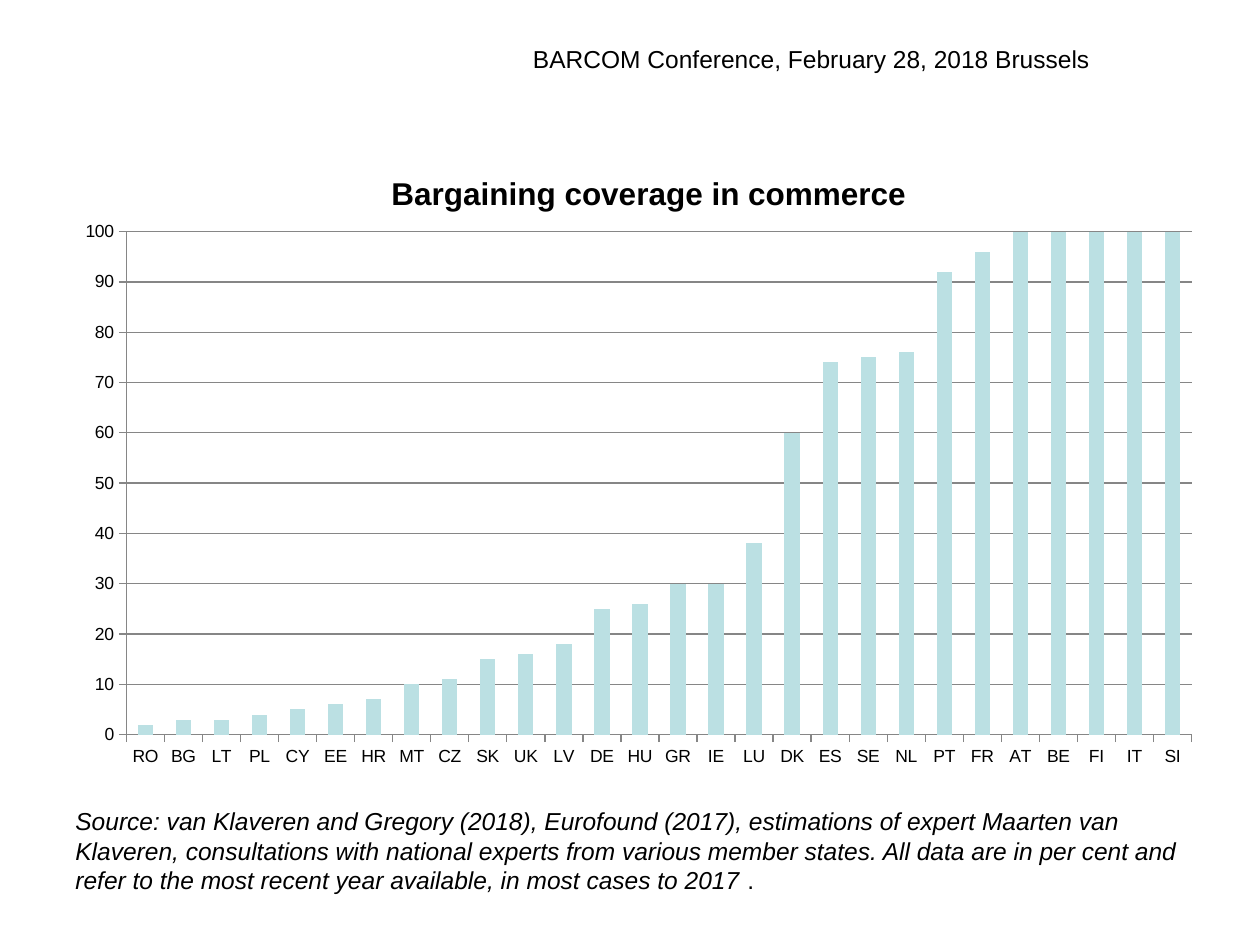
from dataclasses import dataclass

import lxml.etree
import pptx
import pptx.chart.data
import pptx.dml.color
import pptx.enum.chart
import pptx.enum.text
import pptx.oxml.ns
import pptx.util

Inches = pptx.util.Inches
Pt = pptx.util.Pt


@dataclass(frozen=True)
class Theme:
    font: str = "Arial"
    ink: str = "000000"
    bar: str = "BBE0E3"
    rule: str = "868686"
    text_size: int = 14
    chart_title_size: int = 18
    axis_size: int = 10


COVERAGE = {
    "RO": 2, "BG": 3, "LT": 3, "PL": 4, "CY": 5, "EE": 6, "HR": 7,
    "MT": 10, "CZ": 11, "SK": 15, "UK": 16, "LV": 18, "DE": 25, "HU": 26,
    "GR": 30, "IE": 30, "LU": 38, "DK": 60, "ES": 74, "SE": 75, "NL": 76,
    "PT": 92, "FR": 96, "AT": 100, "BE": 100, "FI": 100, "IT": 100, "SI": 100,
}
SOURCE = (
    "Source: van Klaveren and Gregory (2018), Eurofound (2017), estimations of "
    "expert Maarten van Klaveren, consultations with national experts from various "
    "member states. All data are in per cent and refer to the most recent year "
    "available, in most cases to 2017"
)


def color(value):
    return pptx.dml.color.RGBColor.from_string(value)


def add_text(paragraph, text, *, font, size, ink, bold=False, italic=False):
    """Append one formatted run to a paragraph."""
    run = paragraph.add_run()
    run.text = text
    run.font.name = font
    run.font.size = Pt(size)
    run.font.bold = bold
    run.font.italic = italic
    run.font.color.rgb = color(ink)


def set_layout(parent, index, **settings):
    """Give a chart part a manual layout, in fractions of the chart."""
    name = pptx.oxml.ns.qn
    for old in parent.findall(name("c:layout")):
        parent.remove(old)
    layout = lxml.etree.Element(name("c:layout"))
    manual = lxml.etree.SubElement(layout, name("c:manualLayout"))
    for key, value in settings.items():
        lxml.etree.SubElement(manual, name(f"c:{key}")).set("val", str(value))
    parent.insert(index, layout)


class SlideBuilder:
    def __init__(self, presentation, theme):
        self.theme = theme
        self.slide = presentation.slides.add_slide(presentation.slide_layouts[5])

    def body_style(self):
        return dict(font=self.theme.font, size=self.theme.text_size, ink=self.theme.ink)

    def title(self, text, left, top, width, height):
        shape = self.slide.shapes.title
        shape.left, shape.top = Inches(left), Inches(top)
        shape.width, shape.height = Inches(width), Inches(height)
        frame = shape.text_frame
        frame.auto_size = pptx.enum.text.MSO_AUTO_SIZE.NONE
        frame.vertical_anchor = pptx.enum.text.MSO_ANCHOR.TOP
        paragraph = frame.paragraphs[0]
        paragraph.alignment = pptx.enum.text.PP_ALIGN.LEFT
        add_text(paragraph, text, **self.body_style())

    def note(self, text, ending, left, top, width, height):
        shape = self.slide.shapes.add_textbox(
            Inches(left), Inches(top), Inches(width), Inches(height))
        shape.text_frame.word_wrap = True
        paragraph = shape.text_frame.paragraphs[0]
        add_text(paragraph, text, italic=True, **self.body_style())
        add_text(paragraph, ending, **self.body_style())

    def column_chart(self, title, values, left, top, width, height):
        theme = self.theme
        data = pptx.chart.data.CategoryChartData()
        data.categories = list(values)
        data.add_series("Series 1", list(values.values()))
        chart = self.slide.shapes.add_chart(
            pptx.enum.chart.XL_CHART_TYPE.COLUMN_CLUSTERED,
            Inches(left), Inches(top), Inches(width), Inches(height), data).chart
        chart.has_legend = False
        chart.font.name = theme.font
        chart.font.size = Pt(theme.axis_size)
        chart.font.color.rgb = color(theme.ink)

        # Chart title
        chart.has_title = True
        add_text(chart.chart_title.text_frame.paragraphs[0], title, bold=True,
                 font=theme.font, size=theme.chart_title_size, ink=theme.ink)
        set_layout(chart.chart_title._element, 1,
                   xMode="edge", yMode="edge", x=0.28, y=0.05)

        # Columns and plot area
        plot = chart.plots[0]
        plot.gap_width = 150
        plot.vary_by_categories = False
        fill = plot.series[0].format.fill
        fill.solid()
        fill.fore_color.rgb = color(theme.bar)
        set_layout(chart._chartSpace.chart.plotArea, 0, layoutTarget="inner",
                   xMode="edge", yMode="edge", x=0.055, y=0.15, w=0.924, h=0.78)

        # Axes and gridlines
        value_axis = chart.value_axis
        value_axis.minimum_scale, value_axis.maximum_scale = 0, 100
        value_axis.major_unit = 10
        value_axis.has_major_gridlines = True
        for axis in (chart.category_axis, value_axis):
            axis.major_tick_mark = pptx.enum.chart.XL_TICK_MARK.OUTSIDE
        for part in (chart.category_axis, value_axis, value_axis.major_gridlines):
            part.format.line.color.rgb = color(theme.rule)
            part.format.line.width = Pt(0.75)


def main():
    presentation = pptx.Presentation()
    presentation.slide_width = Inches(10)
    presentation.slide_height = Inches(7.5)
    builder = SlideBuilder(presentation, Theme())

    # Conference line, source note and chart
    builder.title("BARCOM Conference, February 28, 2018 Brussels", 4.13, 0.3, 4.89, 0.34)
    builder.note(SOURCE, " .", 0.5, 6.35, 9.15, 0.87)
    builder.column_chart("Bargaining coverage in commerce", COVERAGE, 0.5, 1.07, 9.15, 5.12)

    presentation.save("out.pptx")


if __name__ == "__main__":
    main()
